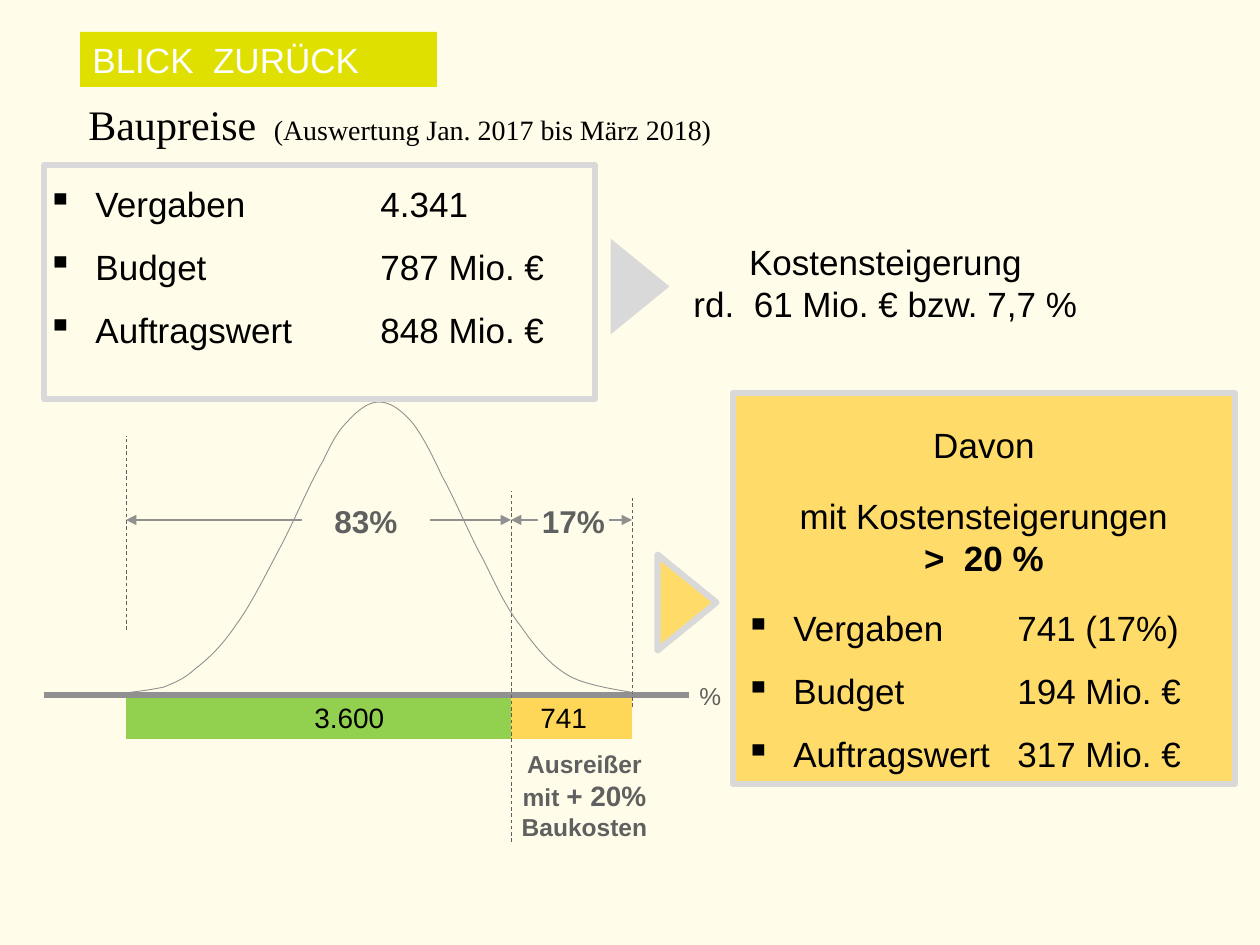
from lxml.etree import SubElement
from pptx import Presentation
from pptx.dml.color import RGBColor
from pptx.enum.dml import MSO_LINE_DASH_STYLE as Dash
from pptx.enum.shapes import MSO_CONNECTOR, MSO_SHAPE as Shape
from pptx.enum.text import MSO_ANCHOR as Anchor, PP_ALIGN as Align
from pptx.oxml.ns import qn
from pptx.util import Pt

SCALE = 914400 / 126  # EMU per px

CREAM = RGBColor(0xFF, 0xFD, 0xE9)
LIME = RGBColor(0xE0, 0xE0, 0x00)
GREEN = RGBColor(0x92, 0xD0, 0x50)
AMBER = RGBColor(0xFF, 0xC0, 0x00)
SILVER = RGBColor(0xD9, 0xD9, 0xD9)
GREY = RGBColor(0x90, 0x90, 0x90)
DARK = RGBColor(0x60, 0x60, 0x60)
BLACK = RGBColor(0, 0, 0)
WHITE = RGBColor(0xFF, 0xFF, 0xFF)

# Content: a run is (text, size, bold); a paragraph is a list of runs
HEADING = [[("BLICK  ZURÜCK", 20, False)]]
TITLE = [[("Baupreise ", 24, False), (" (Auswertung Jan. 2017 bis März 2018)", 16, False)]]
TOTALS = [("Vergaben", "4.341"), ("Budget", "787 Mio. €"), ("Auftragswert", "848 Mio. €")]
OUTLIERS = [("Vergaben", "741 (17%)"), ("Budget", "194 Mio. €"), ("Auftragswert", "317 Mio. €")]
INCREASE = [[("Kostensteigerung", 20, False)], [("rd.  61 Mio. € bzw. 7,7 %", 20, False)]]
THRESHOLD = [[("mit Kostensteigerungen", 20, False)], [(">  20 %", 20, True)]]
OUTLIER_NOTE = [[("Ausreißer", 14, True)], [("mit ", 14, True), ("+ 20%", 16, True)],
                [("Baukosten", 14, True)]]

# Bell curve: start point, then (control, control, end) per segment
CURVE_START = (116, 694)
CURVE = [
    ((134, 692), (150, 690), (164, 687)), ((176, 682), (184, 679), (195, 669)),
    ((208, 659), (222, 646), (236, 625)), ((251, 605), (267, 572), (282, 544)),
    ((296, 517), (311, 481), (323, 461)), ((333, 440), (338, 431), (348, 421)),
    ((357, 411), (368, 402), (379, 402)), ((389, 402), (399, 408), (411, 421)),
    ((421, 433), (431, 452), (442, 476)), ((455, 499), (470, 536), (483, 559)),
    ((496, 585), (505, 606), (520, 625)), ((534, 645), (549, 665), (571, 677)),
    ((593, 688), (640, 693), (653, 696)),
]
LEFT, SPLIT, RIGHT, AXIS = 126, 511, 632, 695
CARD = (733, 393, 502, 391)


def px(value):
    return round(value * SCALE)


prs = Presentation()
prs.slide_width, prs.slide_height = px(1260), px(945)
slide = prs.slides.add_slide(prs.slide_layouts[6])
slide.background.fill.solid()
slide.background.fill.fore_color.rgb = CREAM
shapes = slide.shapes


def add_runs(paragraph, runs, color=BLACK, font="Arial"):
    for text, size, bold in runs:
        run = paragraph.add_run()
        run.text = text
        run.font.size, run.font.bold, run.font.name = Pt(size), bold, font
        run.font.color.rgb = color


def next_paragraph(frame):
    first = frame.paragraphs[0]
    return frame.add_paragraph() if first.runs else first


def write(frame, paragraphs, color=BLACK, align=Align.CENTER, font="Arial"):
    for runs in paragraphs:
        paragraph = next_paragraph(frame)
        paragraph.alignment = align
        add_runs(paragraph, runs, color, font)


def write_figures(frame, rows, tab, gap=0):
    """Bulleted label and figure, aligned by a tab stop."""
    for i, row in enumerate(rows):
        paragraph = next_paragraph(frame)
        paragraph.alignment = Align.LEFT
        paragraph.line_spacing = 1.5
        if gap and i == 0:
            paragraph.space_before = Pt(gap)
        props = paragraph._p.get_or_add_pPr()
        props.set("marL", str(px(48)))
        props.set("indent", str(-px(48)))
        SubElement(props, qn("a:buChar"), char="▪")
        tabs = SubElement(props, qn("a:tabLst"))
        SubElement(tabs, qn("a:tab"), pos=str(px(tab)), algn="l")
        add_runs(paragraph, [("\t".join(row), 20, False)])


def text_box(x, y, w, h, wrap=True):
    frame = shapes.add_textbox(px(x), px(y), px(w), px(h)).text_frame
    frame.word_wrap = wrap
    return frame


def block(kind, x, y, w, h, fill=None, alpha=100, line=None):
    shape = shapes.add_shape(kind, px(x), px(y), px(w), px(h))
    shape.shadow.inherit = False
    if fill is None:
        shape.fill.background()
    else:
        shape.fill.solid()
        shape.fill.fore_color.rgb = fill
        if alpha < 100:
            color = shape.fill._xPr.find(qn("a:solidFill"))[0]
            SubElement(color, qn("a:alpha"), val=str(alpha * 1000))
    if line is None:
        shape.line.fill.background()
    else:
        shape.line.color.rgb, shape.line.width = line, Pt(3.5)
    shape.text_frame.vertical_anchor = Anchor.MIDDLE
    return shape


def rule(x1, y1, x2, y2, color, width, dashed=False, arrows=False):
    line = shapes.add_connector(MSO_CONNECTOR.STRAIGHT, px(x1), px(y1), px(x2), px(y2))
    line.line.color.rgb, line.line.width = color, Pt(width)
    if dashed:
        line.line.dash_style = Dash.DASH
    if arrows:
        for end in ("a:headEnd", "a:tailEnd"):
            SubElement(line.line._get_or_add_ln(), qn(end), type="triangle")
    SubElement(line._element.spPr, qn("a:effectLst"))


def share_label(x, w, text):
    frame = block(Shape.RECTANGLE, x, 496, w, 50, CREAM).text_frame
    frame.margin_left = frame.margin_right = frame.margin_top = frame.margin_bottom = 0
    write(frame, [[(text, 18, True)]], DARK)


def bell_curve(steps=10):
    points, start = [], CURVE_START
    for c1, c2, end in CURVE:
        for t in (i / steps for i in range(1, steps + 1)):
            u = 1 - t
            points.append(tuple(
                px(u**3 * a + 3 * u * u * t * b + 3 * u * t * t * c + t**3 * d)
                for a, b, c, d in zip(start, c1, c2, end)))
        start = end
    builder = shapes.build_freeform(px(CURVE_START[0]), px(CURVE_START[1]))
    builder.add_line_segments(points, close=False)
    curve = builder.convert_to_shape()
    curve.shadow.inherit = False
    curve.fill.background()
    curve.line.color.rgb, curve.line.width = GREY, Pt(0.5)


# Distribution: bars, axis, limits and shares
block(Shape.RECTANGLE, LEFT, AXIS, SPLIT - LEFT, 44, GREEN)
block(Shape.RECTANGLE, SPLIT, AXIS, RIGHT - SPLIT, 44, AMBER, alpha=62)
rule(44, AXIS, 689, AXIS, GREY, 3)
for x, top, bottom in ((LEFT, 436, 630), (SPLIT, 491, 842), (RIGHT, 498, 707)):
    rule(x, bottom, x, top, DARK, 0.5, dashed=True)
for start, end in ((LEFT, SPLIT), (SPLIT, RIGHT)):
    rule(start, 520, end, 520, GREY, 0.75, arrows=True)
share_label(302, 128, "83%")
share_label(538, 71, "17%")
bell_curve()

# Axis and bar labels
for x, y, w, text, size, color in ((687, 675, 48, "%", 14, DARK),
                                   (302, 694, 96, "3.600", 16, BLACK),
                                   (528, 694, 73, "741", 16, BLACK)):
    write(text_box(x, y, w, 46, wrap=False), [[(text, size, False)]], color, Align.LEFT)
write(text_box(505, 743, 159, 106, wrap=False), OUTLIER_NOTE, DARK)

# Totals and resulting increase
write_figures(text_box(35, 155, 551, 331), TOTALS, tab=333)
block(Shape.ISOSCELES_TRIANGLE, 592, 257, 96, 59, SILVER).rotation = 90
block(Shape.RECTANGLE, 44, 165, 551, 234, line=SILVER)
write(text_box(679, 234, 413, 97), INCREASE)

# Outlier card
card = block(Shape.RECTANGLE, *CARD, AMBER, alpha=54, line=SILVER).text_frame
write(card, [[("Davon", 20, False)]])
card.paragraphs[0].line_spacing = 1.5
write_figures(card, OUTLIERS, tab=272, gap=69)
write(text_box(CARD[0], 488, CARD[2], 97), THRESHOLD)
block(Shape.ISOSCELES_TRIANGLE, 639, 573, 96, 59, AMBER, alpha=54, line=SILVER).rotation = 90

# Title and heading
write(text_box(76, 92, 1017, 63), TITLE, align=Align.LEFT, font="Times New Roman")
heading = block(Shape.RECTANGLE, 80, 32, 357, 55, LIME).text_frame
write(heading, HEADING, WHITE, Align.LEFT)

prs.save("out.pptx")
